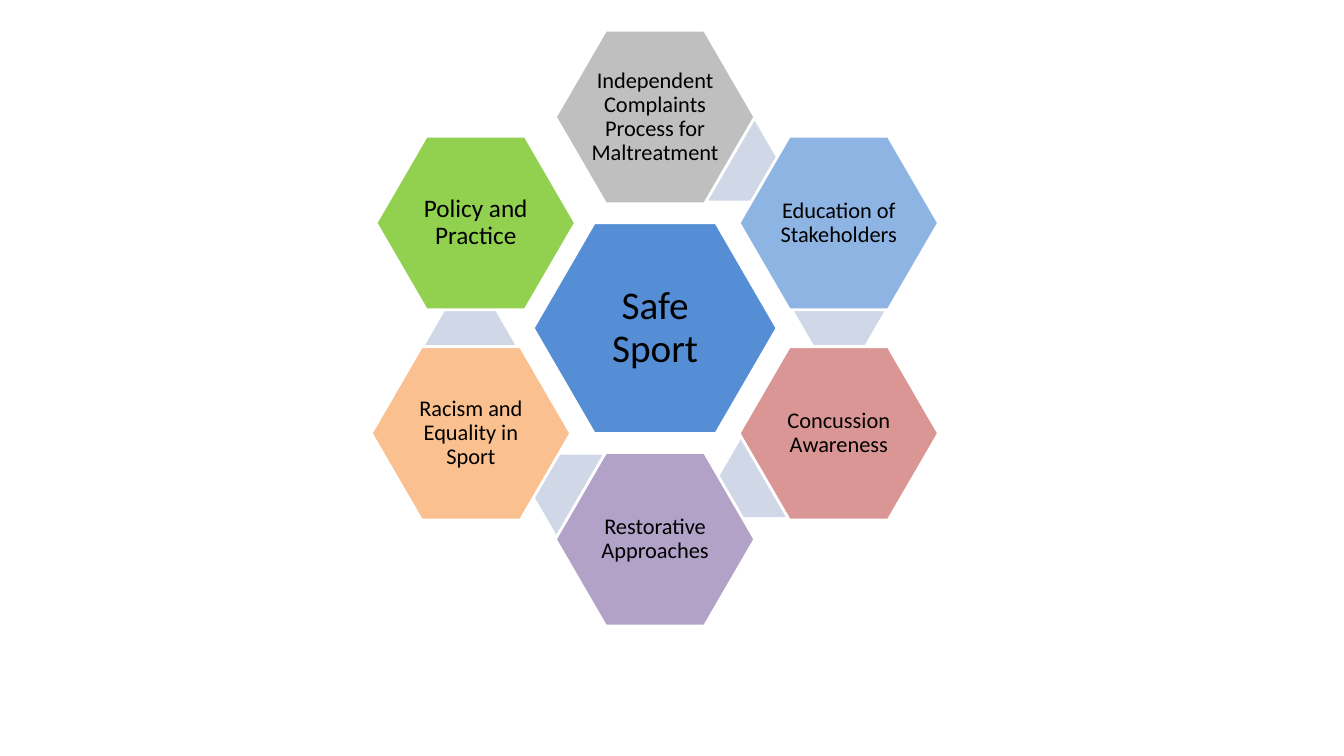
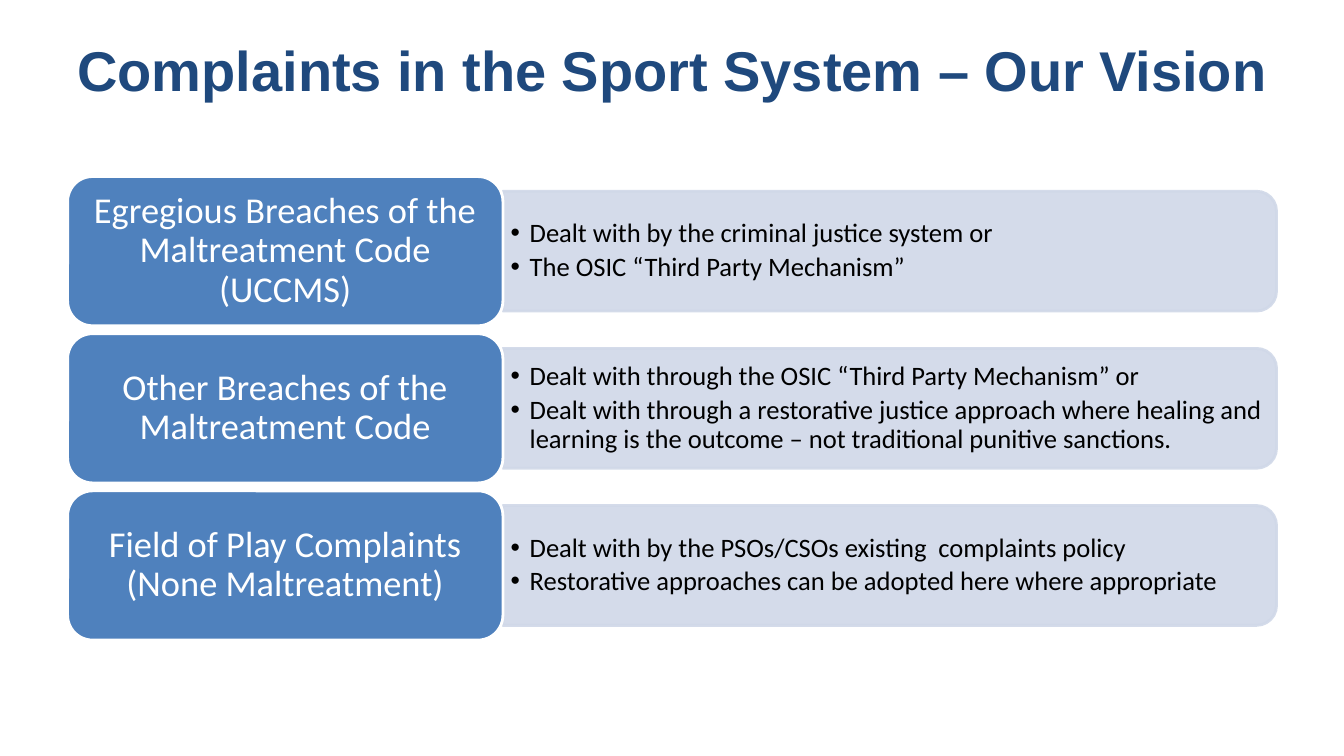
from pptx import Presentation
from pptx.dml.color import RGBColor
from pptx.enum.shapes import MSO_SHAPE as Kind
from pptx.enum.text import MSO_ANCHOR as Anchor, PP_ALIGN as Align
from pptx.oxml.ns import qn
from pptx.util import Cm, Pt
from lxml.etree import SubElement as Sub

# Shared style
BODY, HEAD = "Calibri", "Arial"
BLACK, WHITE, NAVY = "000000", "FFFFFF", "1F497D"
BLUE, PALE = "4F81BD", "D0D8E8"

# Hexagon ring, in cm: offsets are from the hub's centre
HUB = (16.51, 8.27)
TILE = (5.03, 4.37)
LINK = (2.31, 2.01)
TILES = [
    (0, -5.32, "BFBFBF", "Independent Complaints Process for Maltreatment", 16),
    (4.63, -2.65, "8EB4E3", "Education of Stakeholders", 16),
    (4.63, 2.65, "D99694", "Concussion Awareness", 16),
    (0, 5.32, "B3A2C7", "Restorative Approaches", 16),
    (-4.64, 2.65, "FAC090", "Racism and Equality in Sport", 16),
    (-4.52, -2.65, "92D050", "Policy and Practice", 18),
]
LINKS = [(1.94, -4.22), (4.64, -0.46), (2.76, 3.76), (-1.92, 4.19), (-4.66, 0.46)]

# Rows of the complaints slide
ROWS = [
    ("Egregious Breaches of the Maltreatment Code (UCCMS)",
     ["Dealt with by the criminal justice system or",
      "The OSIC “Third Party Mechanism”"]),
    ("Other Breaches of the Maltreatment Code",
     ["Dealt with through the OSIC “Third Party Mechanism” or",
      "Dealt with through a restorative justice approach where healing and "
      "learning is the outcome – not traditional punitive sanctions."]),
    ("Field of Play Complaints (None Maltreatment)",
     ["Dealt with by the PSOs/CSOs existing  complaints policy",
      "Restorative approaches can be adopted here where appropriate"]),
]


def tint(code):
    return RGBColor.from_string(code)


def fade(form, part):
    """Make a solid fill or line let some of the ground through."""
    for node in form.iter(qn("a:srgbClr")):
        Sub(node, qn("a:alpha"), val=str(part * 1000))


def write(shape, lines, size=16, color=BLACK, font=BODY, bold=False, align=Align.CENTER,
          anchor=Anchor.MIDDLE, pad=(0.05, 0.05), lead=0.9, after=0, bullet=False):
    frame = shape.text_frame
    frame.word_wrap = True
    frame.vertical_anchor = anchor
    frame.margin_left = frame.margin_right = Cm(pad[0])
    frame.margin_top = frame.margin_bottom = Cm(pad[1])
    for i, line in enumerate(lines):
        para = frame.paragraphs[0] if i == 0 else frame.add_paragraph()
        para.text = line
        para.alignment = align
        para.line_spacing = lead
        para.space_after = Pt(after)
        if bullet:
            props = para._p.get_or_add_pPr()
            props.set("marL", str(Cm(0.48)))
            props.set("indent", str(-Cm(0.48)))
            Sub(props, qn("a:buFont"), typeface=HEAD)
            Sub(props, qn("a:buChar"), char="•")
        para.font.name = font
        para.font.size = Pt(size)
        para.font.bold = bold
        para.font.color.rgb = tint(color)


def block(slide, kind, mid, dims, fill, line=None):
    """Add a filled shape by its centre and size in cm."""
    (x, y), (w, h) = mid, dims
    shape = slide.shapes.add_shape(kind, Cm(x - w / 2), Cm(y - h / 2), Cm(w), Cm(h))
    shape.shadow.inherit = False
    shape.fill.solid()
    shape.fill.fore_color.rgb = tint(fill)
    if line:
        shape.line.color.rgb = tint(line)
        shape.line.width = Pt(2)
    else:
        shape.line.fill.background()
    return shape


def hexa(slide, shift, dims, fill, line=None):
    mid = (HUB[0] + shift[0], HUB[1] + shift[1])
    shape = block(slide, Kind.HEXAGON, mid, dims, fill, line)
    shape.adjustments[0] = 0.29
    return shape


def label(slide, x, y, w, h, lines, **style):
    box = slide.shapes.add_textbox(Cm(x), Cm(y), Cm(w), Cm(h))
    write(box, lines, **style)


def row(slide, y, name, points):
    # Bar with its right end rounded
    bar = block(slide, Kind.ROUND_2_SAME_RECTANGLE, (22.42, y), (3.02, 19.5), PALE, PALE)
    bar.rotation = 90
    fade(bar._element.spPr, 90)
    label(slide, 12.67, y - 1.36, 19.36, 2.72, points, size=19, align=Align.LEFT,
          pad=(0.2, 0.1), after=3.5, bullet=True)
    # Heading tile
    tile = block(slide, Kind.ROUNDED_RECTANGLE, (7.19, y), (10.97, 3.76), BLUE, WHITE)
    write(tile, [name], size=26, color=WHITE, pad=(0.28, 0.13))


def ring(slide):
    hub = hexa(slide, (0, 0), (6.15, 5.31), "558ED5", WHITE)
    write(hub, ["Safe Sport"], size=28, pad=(0.1, 0.1))
    for shift in LINKS:
        hexa(slide, shift, LINK, PALE)
    for x, y, fill, text, size in TILES:
        write(hexa(slide, (x, y), TILE, fill, WHITE), [text], size=size)


def vision(slide):
    label(slide, 1.7, 0.76, 30.48, 3.18, ["Complaints in the Sport System – Our Vision"],
          size=40, color=NAVY, font=HEAD, bold=True, anchor=Anchor.TOP,
          pad=(0.1, 0.13), lead=1)
    for i, (name, points) in enumerate(ROWS):
        row(slide, 6.33 + i * 3.96, name, points)


def main():
    deck = Presentation()
    deck.slide_width, deck.slide_height = Cm(33.87), Cm(19.05)
    for draw in (ring, vision):
        draw(deck.slides.add_slide(deck.slide_layouts[6]))
    deck.save("out.pptx")


if __name__ == "__main__":
    main()
